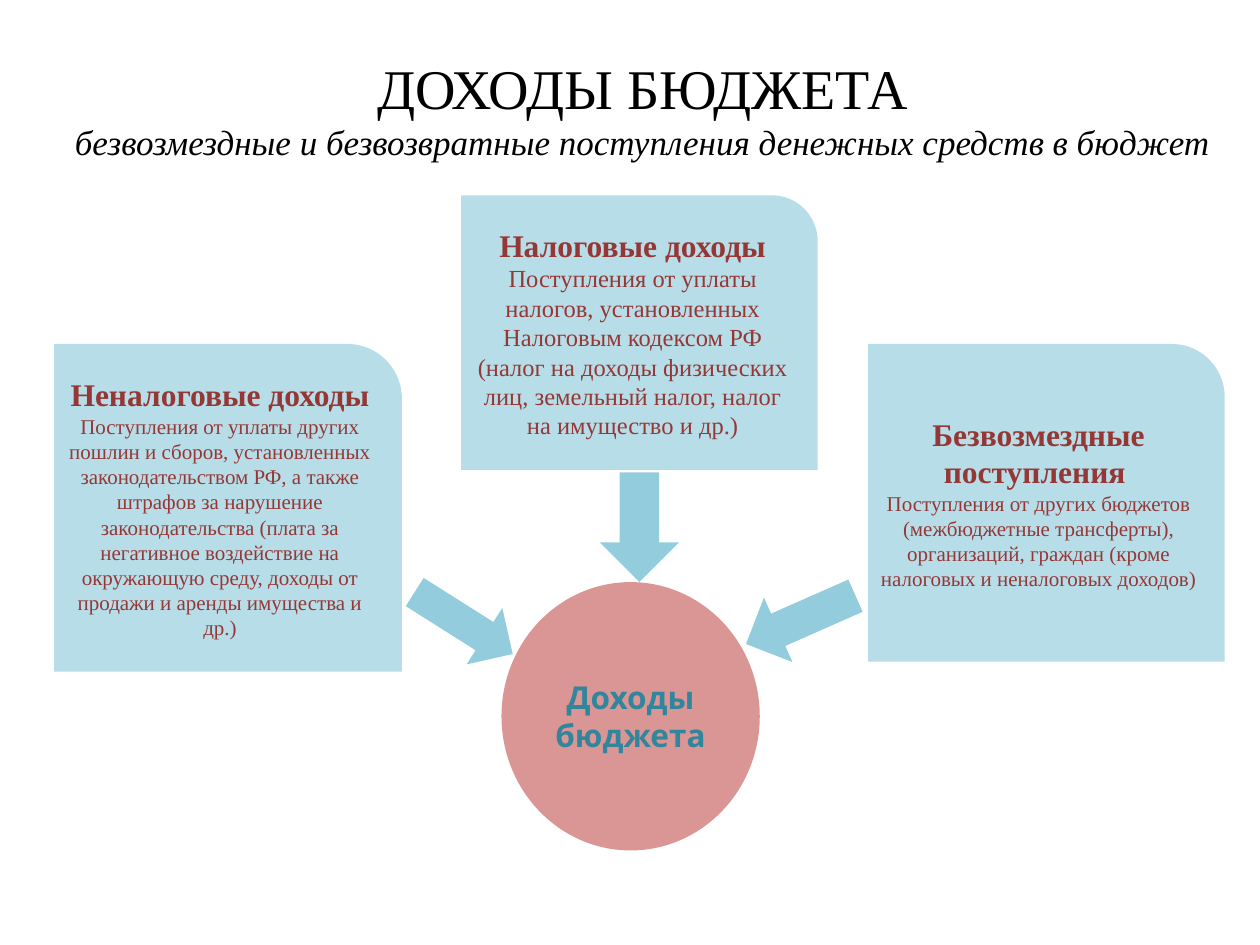
import pptx
import pptx.util
import pptx.dml.color
import pptx.enum.shapes
import pptx.enum.text

Inches = pptx.util.Inches
RGBColor = pptx.dml.color.RGBColor
SHAPE = pptx.enum.shapes.MSO_SHAPE

BLACK = RGBColor(0x00, 0x00, 0x00)
ROSE = RGBColor(0xD9, 0x96, 0x94)
TEAL = RGBColor(0x31, 0x85, 0x9C)
PALE_BLUE = RGBColor(0xB7, 0xDE, 0xE8)
SKY_BLUE = RGBColor(0x93, 0xCD, 0xDD)
DARK_RED = RGBColor(0x95, 0x37, 0x35)
SERIF = "Times New Roman"
SANS = "Cabin"

TITLE_AREA = (0.2, 0.29, 9.8, 1.13)
TITLE = [
    ("ДОХОДЫ БЮДЖЕТА", 32, False, False),
    ("безвозмездные и безвозвратные поступления денежных средств в бюджет", 20, False, True),
]
CENTER_AREA = (3.98, 4.62, 2.05, 2.13)
CENTER = [("Доходы бюджета", 18, True, False)]
INCOME_CARDS = [
    ((3.66, 1.55, 2.83, 2.18), "Налоговые доходы", 14,
     "Поступления от уплаты налогов, установленных Налоговым кодексом РФ "
     "(налог на доходы физических лиц, земельный налог, налог на имущество и др.)"),
    ((0.43, 2.73, 2.76, 2.6), "Неналоговые доходы", 12,
     "Поступления от уплаты других пошлин и сборов, установленных законодательством РФ, "
     "а также штрафов за нарушение законодательства (плата за негативное воздействие "
     "на окружающую среду, доходы от продажи и аренды имущества и др.)"),
    ((6.89, 2.73, 2.83, 2.52), "Безвозмездные поступления ", 12,
     "Поступления от других бюджетов (межбюджетные трансферты), организаций, "
     "граждан (кроме налоговых и неналоговых доходов)"),
]
ARROWS = [
    (SHAPE.RIGHT_ARROW, (3.22, 4.68, 0.92, 0.53), 32.3),
    (SHAPE.DOWN_ARROW, (4.76, 3.75, 0.63, 0.87), 0),
    (SHAPE.LEFT_ARROW, (5.88, 4.64, 0.95, 0.56), 336.2),
]


def write_lines(box, lines, font_name, color):
    frame = box.text_frame
    frame.word_wrap = True
    frame.vertical_anchor = pptx.enum.text.MSO_ANCHOR.MIDDLE
    for index, (text, size, bold, italic) in enumerate(lines):
        para = frame.add_paragraph() if index else frame.paragraphs[0]
        para.alignment = pptx.enum.text.PP_ALIGN.CENTER
        span = para.add_run()
        span.text = text
        span.font.name = font_name
        span.font.size = pptx.util.Pt(size)
        span.font.bold = bold
        span.font.italic = italic
        span.font.color.rgb = color


def add_filled_shape(page, kind, area, color):
    shape = page.shapes.add_shape(kind, *map(Inches, area))
    shape.shadow.inherit = False
    shape.fill.solid()
    shape.fill.fore_color.rgb = color
    shape.line.fill.background()
    return shape


def main():
    deck = pptx.Presentation()
    deck.slide_width, deck.slide_height = Inches(10), Inches(7.5)
    page = deck.slides.add_slide(deck.slide_layouts[6])

    title = page.shapes.add_textbox(*map(Inches, TITLE_AREA))
    write_lines(title, TITLE, SERIF, BLACK)

    center = add_filled_shape(page, SHAPE.OVAL, CENTER_AREA, ROSE)
    write_lines(center, CENTER, SANS, TEAL)

    for area, heading, size, details in INCOME_CARDS:
        card = add_filled_shape(page, SHAPE.ROUND_1_RECTANGLE, area, PALE_BLUE)
        lines = [(heading, 18, True, False), (details, size, False, False)]
        write_lines(card, lines, SERIF, DARK_RED)

    for kind, area, angle in ARROWS:
        arrow = add_filled_shape(page, kind, area, SKY_BLUE)
        arrow.rotation = angle

    deck.save("out.pptx")


if __name__ == "__main__":
    main()
